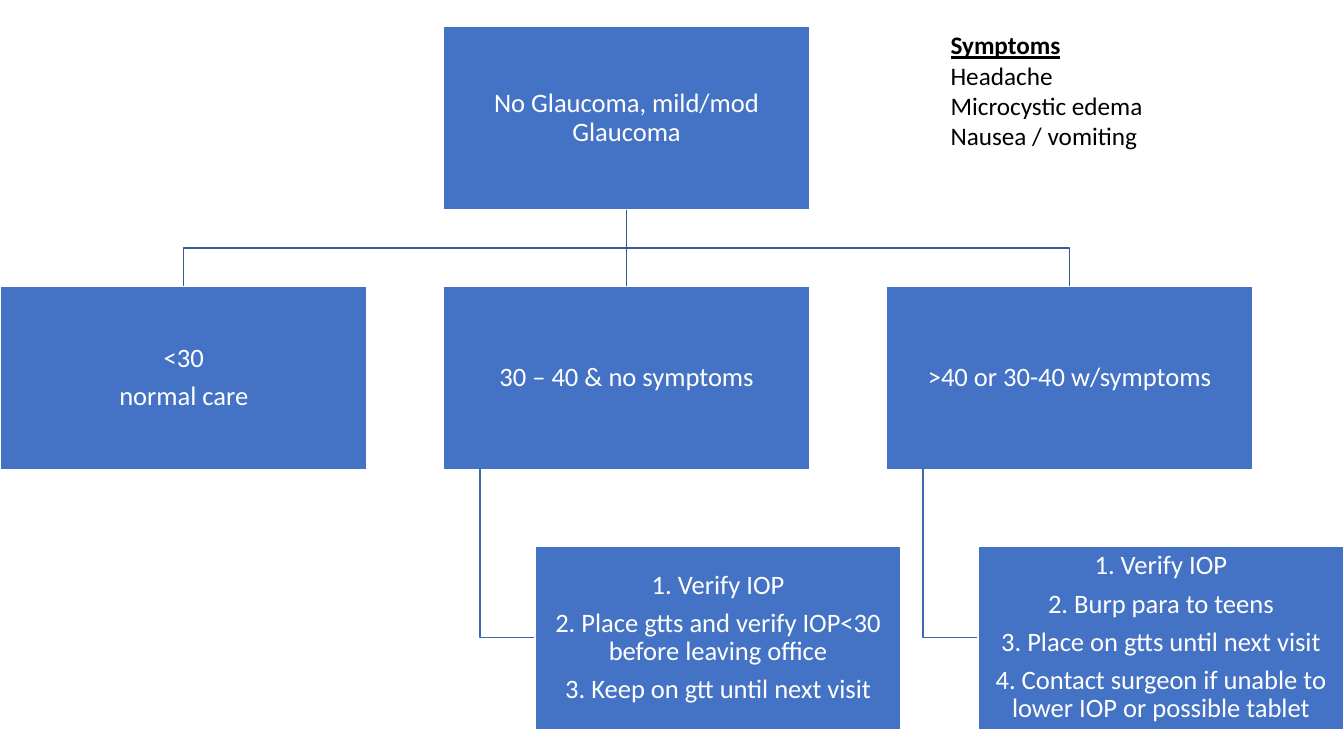
from dataclasses import dataclass

from lxml import etree
from pptx import Presentation
from pptx.dml.color import RGBColor
from pptx.enum.shapes import MSO_CONNECTOR, MSO_SHAPE
from pptx.enum.text import MSO_ANCHOR, PP_ALIGN
from pptx.oxml.ns import qn
from pptx.util import Pt

RECTANGLE = MSO_SHAPE.RECTANGLE
STRAIGHT = MSO_CONNECTOR.STRAIGHT
MIDDLE = MSO_ANCHOR.MIDDLE
CENTER = PP_ALIGN.CENTER
BLANK_LAYOUT = 6


@dataclass(frozen=True)
class Theme:
    font: str = "Calibri"
    box_size: float = 19
    list_size: float = 18
    box_fill: RGBColor = RGBColor(0x44, 0x72, 0xC4)
    white: RGBColor = RGBColor(0xFF, 0xFF, 0xFF)
    black: RGBColor = RGBColor(0, 0, 0)
    branch_line: RGBColor = RGBColor(0x36, 0x5B, 0x9D)
    step_line: RGBColor = RGBColor(0x3E, 0x67, 0xB2)
    line_width: float = 1


THEME = Theme()

# Chart proportions, in points
BOX_W, BOX_H = 261.5, 130.75
COLUMN_PITCH, ROW_PITCH = 316.3, 185.6
STEP_INDENT = BOX_W / 4
STUB_INDENT = BOX_W / 10

DIAGNOSIS = ["No Glaucoma, mild/mod Glaucoma"]
# Pressure range, then the steps to take
BRANCHES = [
    (["<30", "normal care"], []),
    (["30 – 40 & no symptoms"],
     ["1. Verify IOP",
      "2. Place gtts and verify IOP<30 before leaving office",
      "3. Keep on gtt until next visit"]),
    ([">40 or 30-40 w/symptoms"],
     ["1. Verify IOP",
      "2. Burp para to teens",
      "3. Place on gtts until next visit",
      "4. Contact surgeon if unable to lower IOP or possible tablet"]),
]
SYMPTOMS = ["Symptoms", "Headache", "Microcystic edema", "Nausea / vomiting"]


def style_text(paragraph, size, color):
    for run in paragraph.runs:
        run.font.name = THEME.font
        run.font.size = Pt(size)
        run.font.color.rgb = color


def add_box(slide, left, top, lines):
    box = slide.shapes.add_shape(RECTANGLE, Pt(left), Pt(top), Pt(BOX_W), Pt(BOX_H))
    box.shadow.inherit = False
    box.fill.solid()
    box.fill.fore_color.rgb = THEME.box_fill
    box.line.color.rgb = THEME.white
    box.line.width = Pt(THEME.line_width)
    frame = box.text_frame
    frame.word_wrap = True
    frame.vertical_anchor = MIDDLE
    frame.margin_left = frame.margin_right = Pt(0.95)
    frame.margin_top = frame.margin_bottom = Pt(0.95)
    frame.text = "\n".join(lines)
    for paragraph in frame.paragraphs:
        paragraph.alignment = CENTER
        paragraph.line_spacing = 0.9
        paragraph.space_after = Pt(0.35 * THEME.box_size)
        style_text(paragraph, THEME.box_size, THEME.white)


def add_link(slide, points, color):
    """Draw a straight connector, or an open outline when the link bends."""
    corners = [(Pt(x), Pt(y)) for x, y in points]
    if len(corners) == 2:
        link = slide.shapes.add_connector(STRAIGHT, *corners[0], *corners[1])
        etree.SubElement(link._element.spPr, qn("a:effectLst"))
    else:
        builder = slide.shapes.build_freeform(*corners[0])
        builder.add_line_segments(corners[1:], close=False)
        link = builder.convert_to_shape()
        link.shadow.inherit = False
        link.fill.background()
    link.line.color.rgb = color
    link.line.width = Pt(THEME.line_width)


def add_branch(slide, left, top, trunk, pressure, steps):
    # Link from the diagnosis down to the pressure range
    center = left + BOX_W / 2
    trunk_x, trunk_y = trunk
    bend_y = (trunk_y + top) / 2
    bends = [] if center == trunk_x else [(trunk_x, bend_y), (center, bend_y)]
    add_link(slide, [trunk, *bends, (center, top)], THEME.branch_line)
    add_box(slide, left, top, pressure)

    # Steps, hung from the left side of the range
    if steps:
        stub_x = left + STUB_INDENT
        steps_left, steps_top = left + STEP_INDENT, top + ROW_PITCH
        steps_middle = steps_top + BOX_H / 2
        add_link(slide, [(stub_x, top + BOX_H), (stub_x, steps_middle),
                         (steps_left, steps_middle)], THEME.step_line)
        add_box(slide, steps_left, steps_top, steps)


def add_decision_tree(slide, left, top):
    diagnosis_left = left + COLUMN_PITCH
    trunk = (diagnosis_left + BOX_W / 2, top + BOX_H)
    for column, (pressure, steps) in enumerate(BRANCHES):
        add_branch(slide, left + column * COLUMN_PITCH, top + ROW_PITCH,
                   trunk, pressure, steps)
    add_box(slide, diagnosis_left, top, DIAGNOSIS)


def add_symptoms(slide, left, top, width, height):
    symptoms = slide.shapes.add_textbox(Pt(left), Pt(top), Pt(width), Pt(height))
    frame = symptoms.text_frame
    frame.word_wrap = True
    frame.text = "\n".join(SYMPTOMS)
    for paragraph in frame.paragraphs:
        style_text(paragraph, THEME.list_size, THEME.black)
    heading = frame.paragraphs[0].runs[0].font
    heading.bold = True
    heading.underline = True


def main():
    deck = Presentation()
    deck.slide_width, deck.slide_height = Pt(960), Pt(540)
    slide = deck.slides.add_slide(deck.slide_layouts[BLANK_LAYOUT])
    add_decision_tree(slide, left=0.5, top=19)
    add_symptoms(slide, left=671.9, top=17.7, width=253.4, height=116.6)
    deck.save("out.pptx")


if __name__ == "__main__":
    main()
